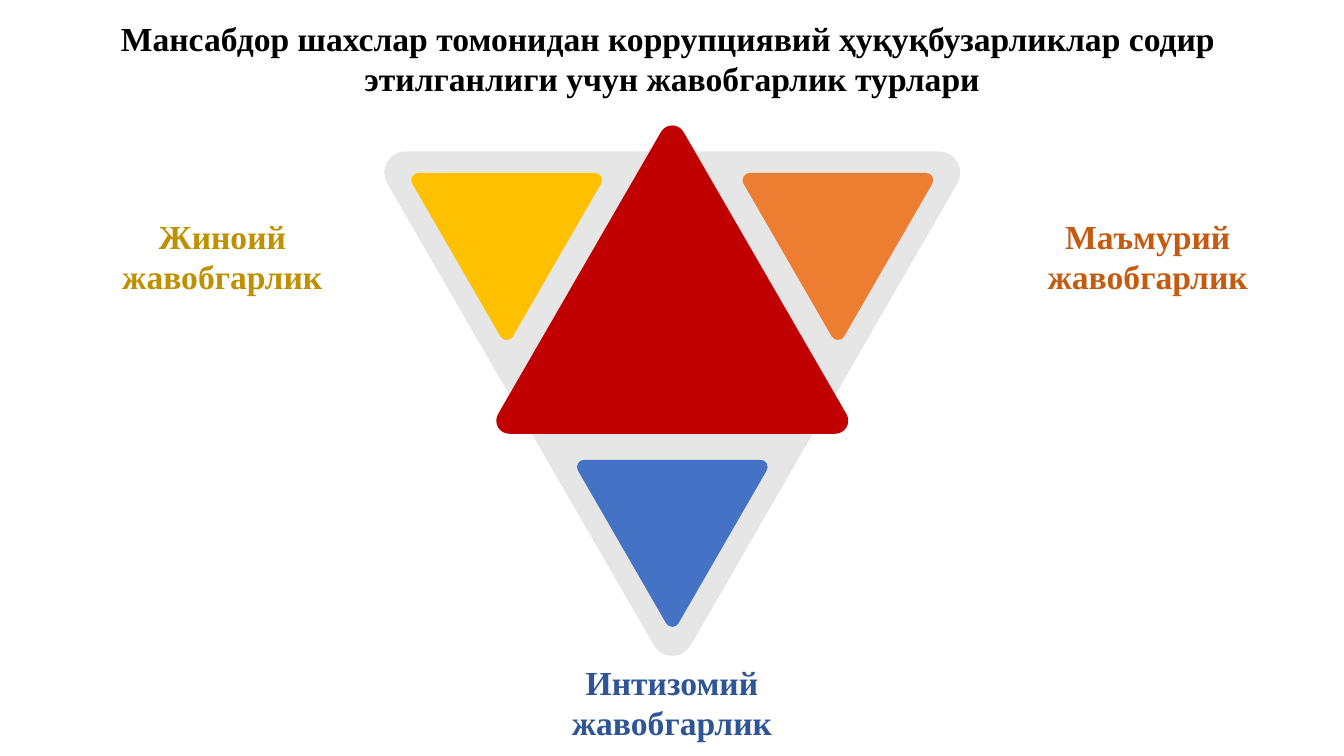
from math import cos, radians, sin, sqrt, tan

from lxml.etree import SubElement
from pptx import Presentation
from pptx.dml.color import RGBColor
from pptx.enum.text import MSO_AUTO_SIZE as AutoSize, PP_ALIGN as Align
from pptx.oxml.ns import qn
from pptx.util import Pt

GREY = RGBColor(0xE7, 0xE6, 0xE6)
BLUE = RGBColor(0x44, 0x72, 0xC4)
ORANGE = RGBColor(0xED, 0x7D, 0x31)
YELLOW = RGBColor(0xFF, 0xC0, 0x00)
RED = RGBColor(0xC0, 0x00, 0x00)
BLACK = RGBColor(0x00, 0x00, 0x00)
DARK_YELLOW = RGBColor(0xBF, 0x90, 0x00)
DARK_ORANGE = RGBColor(0xC5, 0x5A, 0x11)
DARK_BLUE = RGBColor(0x2F, 0x55, 0x97)

CENTER_X, CENTER_Y = 480.2, 233.3
SATELLITE_DISTANCE = 136.6
UP, DOWN = 0, 180
LABEL_WIDTH, TEXT_HEIGHT = 230, 65.4
ARC_HANDLE = 4 / 3 * tan(radians(15))


def add_segment(outline, command, points):
    segment = SubElement(outline, qn(f"a:{command}"))
    for x, y in points:
        SubElement(segment, qn("a:pt"), x=str(Pt(x)), y=str(Pt(y)))


def add_rounded_triangle(shapes, x, y, side, radius, rotation, color):
    """Equilateral triangle around (x, y); side joins the centres of its corner arcs."""
    reach = side / sqrt(3)
    width, height = side + 2 * radius, 1.5 * reach + 2 * radius
    middle_y = y - reach / 4 if rotation == UP else y + reach / 4
    left, top = x - width / 2, middle_y - height / 2
    builder = shapes.build_freeform(Pt(left), Pt(top))
    builder.add_line_segments([(Pt(left + width), Pt(top)),
                               (Pt(left + width), Pt(top + height)),
                               (Pt(left), Pt(top + height))])
    triangle = builder.convert_to_shape()

    # The box above fixes the bounds; its outline gives way to lines and 60-degree arcs.
    outline = triangle.element.find(".//" + qn("a:path"))
    for segment in list(outline):
        outline.remove(segment)
    add_segment(outline, "moveTo", [(width / 2, 0)])
    for corner, arc_starts in ((-90, [-90]), (30, [-30, 30]), (150, [90, 150]), (270, [210])):
        arc_x = width / 2 + reach * cos(radians(corner))
        arc_y = radius + reach * (1 + sin(radians(corner)))
        for start in arc_starts:
            curve = []
            for angle, handle in ((start, 0), (start, ARC_HANDLE),
                                  (start + 60, -ARC_HANDLE), (start + 60, 0)):
                cosine, sine = cos(radians(angle)), sin(radians(angle))
                curve.append((arc_x + radius * (cosine - handle * sine),
                              arc_y + radius * (sine + handle * cosine)))
            if start == corner - 60:
                add_segment(outline, "lnTo", curve[:1])
            add_segment(outline, "cubicBezTo", curve[1:])
    SubElement(outline, qn("a:close"))

    triangle.rotation = rotation
    triangle.shadow.inherit = False
    triangle.fill.solid()
    triangle.fill.fore_color.rgb = color
    triangle.line.fill.background()


deck = Presentation()
deck.slide_width, deck.slide_height = Pt(960), Pt(540)
page = deck.slides.add_slide(deck.slide_layouts[6])

diagram = page.shapes.add_group_shape().shapes
add_rounded_triangle(diagram, CENTER_X, CENTER_Y, 381, 15.2, DOWN, GREY)
for bearing, color in ((90, BLUE), (-30, ORANGE), (210, YELLOW)):
    add_rounded_triangle(diagram,
                         CENTER_X + SATELLITE_DISTANCE * cos(radians(bearing)),
                         CENTER_Y + SATELLITE_DISTANCE * sin(radians(bearing)),
                         126, 5.1, DOWN, color)
add_rounded_triangle(diagram, CENTER_X, CENTER_Y, 232.8, 9.3, UP, RED)

# The trailing space shifts the first title line slightly left of centre.
title = ["Мансабдор шахслар томонидан коррупциявий ҳуқуқбузарликлар содир ",
         "этилганлиги учун жавобгарлик турлари"]
texts = [
    (0, 9.2, 960, title, BLACK),
    (43.8, 150.5, LABEL_WIDTH, ["Жиноий жавобгарлик"], DARK_YELLOW),
    (704.8, 150.5, LABEL_WIDTH, ["Маъмурий жавобгарлик"], DARK_ORANGE),
    (365, 469, LABEL_WIDTH, ["Интизомий жавобгарлик"], DARK_BLUE),
]
font_format = {"name": "Times New Roman", "size": Pt(24), "bold": True}
for left, top, width, lines, color in texts:
    box = page.shapes.add_textbox(Pt(left), Pt(top), Pt(width), Pt(TEXT_HEIGHT))
    frame = box.text_frame
    frame.word_wrap = True
    frame.auto_size = AutoSize.SHAPE_TO_FIT_TEXT
    for index, line in enumerate(lines):
        para = frame.add_paragraph() if index else frame.paragraphs[0]
        para.alignment = Align.CENTER
        span = para.add_run()
        span.text = line
        for name, value in font_format.items():
            setattr(span.font, name, value)
        span.font.color.rgb = color

deck.save("out.pptx")
